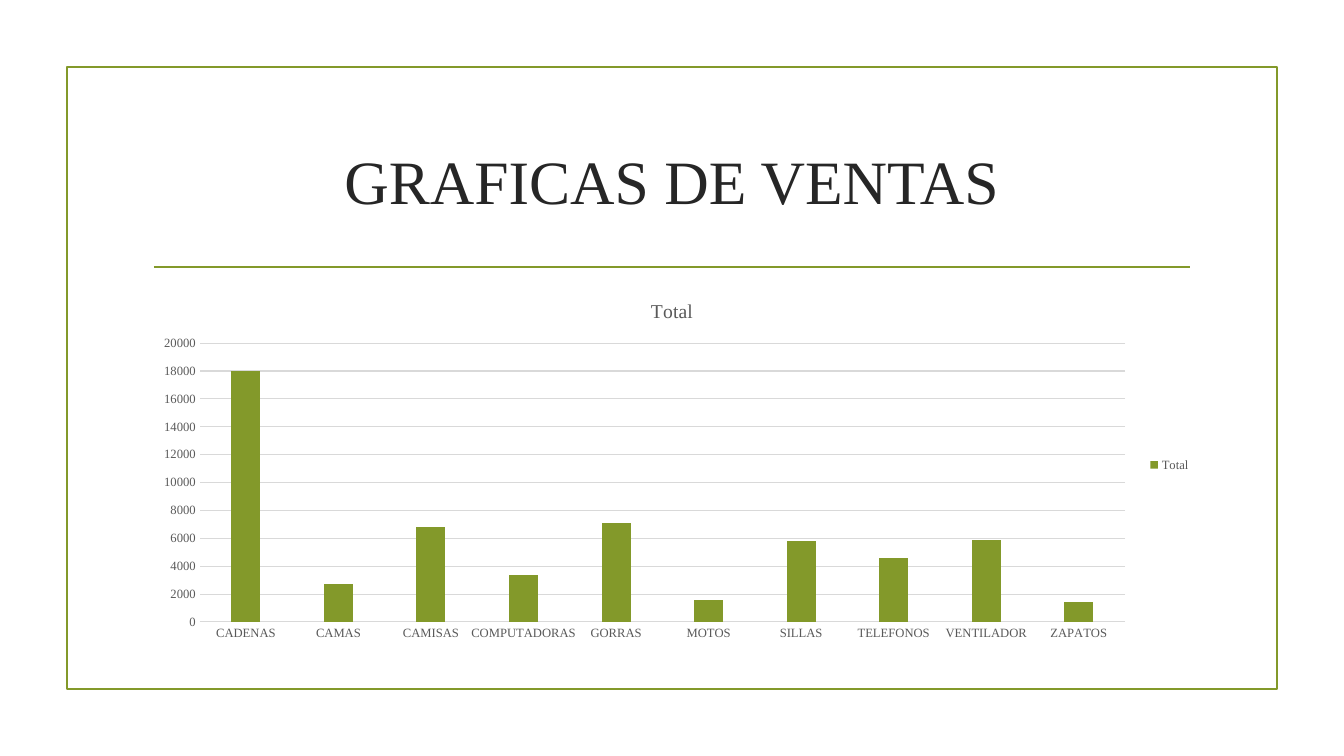
from pptx import Presentation
from pptx.chart.data import CategoryChartData
from pptx.dml.color import RGBColor
from pptx.enum.chart import XL_CHART_TYPE, XL_LEGEND_POSITION, XL_TICK_MARK
from pptx.enum.shapes import MSO_CONNECTOR, MSO_SHAPE
from pptx.enum.text import MSO_ANCHOR, PP_ALIGN
from pptx.oxml.ns import qn
from pptx.util import Emu, Pt
from lxml import etree

COLUMNS = XL_CHART_TYPE.COLUMN_CLUSTERED
LEGEND_RIGHT = XL_LEGEND_POSITION.RIGHT
NO_TICK = XL_TICK_MARK.NONE
STRAIGHT = MSO_CONNECTOR.STRAIGHT
RECTANGLE = MSO_SHAPE.RECTANGLE
MIDDLE = MSO_ANCHOR.MIDDLE
CENTER = PP_ALIGN.CENTER

PX_PER_INCH = 100.8
FONT = "Times New Roman"
COLORS = {"olive": "83992A", "heading": "262626", "label": "595959",
          "grid": "D9D9D9", "white": "FFFFFF"}
SALES = {
    "CADENAS": 18000, "CAMAS": 2700, "CAMISAS": 6800, "COMPUTADORAS": 3400,
    "GORRAS": 7100, "MOTOS": 1600, "SILLAS": 5800, "TELEFONOS": 4600,
    "VENTILADOR": 5900, "ZAPATOS": 1400,
}


def px(length):
    return Emu(round(length * 914400 / PX_PER_INCH))


def rgb(name):
    return RGBColor.from_string(COLORS[name])


def style_line(line, color, width):
    line.color.rgb = rgb(color)
    line.width = Pt(width)


def style_font(font, size, color):
    font.name = FONT
    font.size = Pt(size)
    font.bold = False
    font.color.rgb = rgb(color)


def write_text(frame, text, size, color, align=None):
    paragraph = frame.paragraphs[0]
    paragraph.alignment = align
    run = paragraph.add_run()
    run.text = text
    style_font(run.font, size, color)


def add_frame(slide, left, top, width, height):
    border = slide.shapes.add_shape(
        RECTANGLE, px(left), px(top), px(width), px(height))
    border.shadow.inherit = False
    border.fill.background()
    style_line(border.line, "olive", 1.25)


def add_heading(slide, left, top, width, height):
    heading = slide.shapes.add_textbox(px(left), px(top), px(width), px(height))
    heading.text_frame.word_wrap = True
    heading.text_frame.vertical_anchor = MIDDLE
    write_text(heading.text_frame, "GRAFICAS DE VENTAS",
               size=44, color="heading", align=CENTER)

    inset = 11
    rule_y = px(top + height + 15)
    rule = slide.shapes.add_connector(
        STRAIGHT, px(left + inset), rule_y, px(left + width - inset), rule_y)
    style_line(rule.line, "olive", 1.25)
    etree.SubElement(rule._element.spPr, qn("a:effectLst"))


def add_sales_chart(slide, left, top, width, height):
    data = CategoryChartData()
    data.categories = list(SALES)
    data.add_series("Total", list(SALES.values()))
    chart = slide.shapes.add_chart(
        COLUMNS, px(left), px(top), px(width), px(height), data).chart
    style_font(chart.font, 10, "label")

    chart.has_title = True
    write_text(chart.chart_title.text_frame, "Total", size=14, color="label")
    chart.chart_title.include_in_layout = False

    chart.has_legend = True
    chart.legend.position = LEGEND_RIGHT
    chart.legend.include_in_layout = False
    style_font(chart.legend.font, 9, "label")

    for axis in (chart.category_axis, chart.value_axis):
        axis.major_tick_mark = NO_TICK
        axis.minor_tick_mark = NO_TICK
        style_font(axis.tick_labels.font, 9, "label")
    style_line(chart.category_axis.format.line, "grid", 0.75)
    chart.value_axis.format.line.fill.background()
    chart.value_axis.has_major_gridlines = True
    style_line(chart.value_axis.major_gridlines.format.line, "grid", 0.75)

    plot = chart.plots[0]
    plot.gap_width = 219
    plot.overlap = -27
    plot.vary_by_categories = False
    totals = plot.series[0]
    totals.format.fill.solid()
    totals.format.fill.fore_color.rgb = rgb("olive")
    totals.invert_if_negative = False


def main():
    presentation = Presentation()
    presentation.slide_width = px(1344)
    presentation.slide_height = px(756)
    slide = presentation.slides.add_slide(presentation.slide_layouts[6])
    slide.background.fill.solid()
    slide.background.fill.fore_color.rgb = rgb("white")
    add_frame(slide, 67, 67, 1210, 622)
    add_heading(slide, 143, 108, 1058, 144)
    add_sales_chart(slide, 143, 282, 1058, 366)
    presentation.save("out.pptx")


if __name__ == "__main__":
    main()
